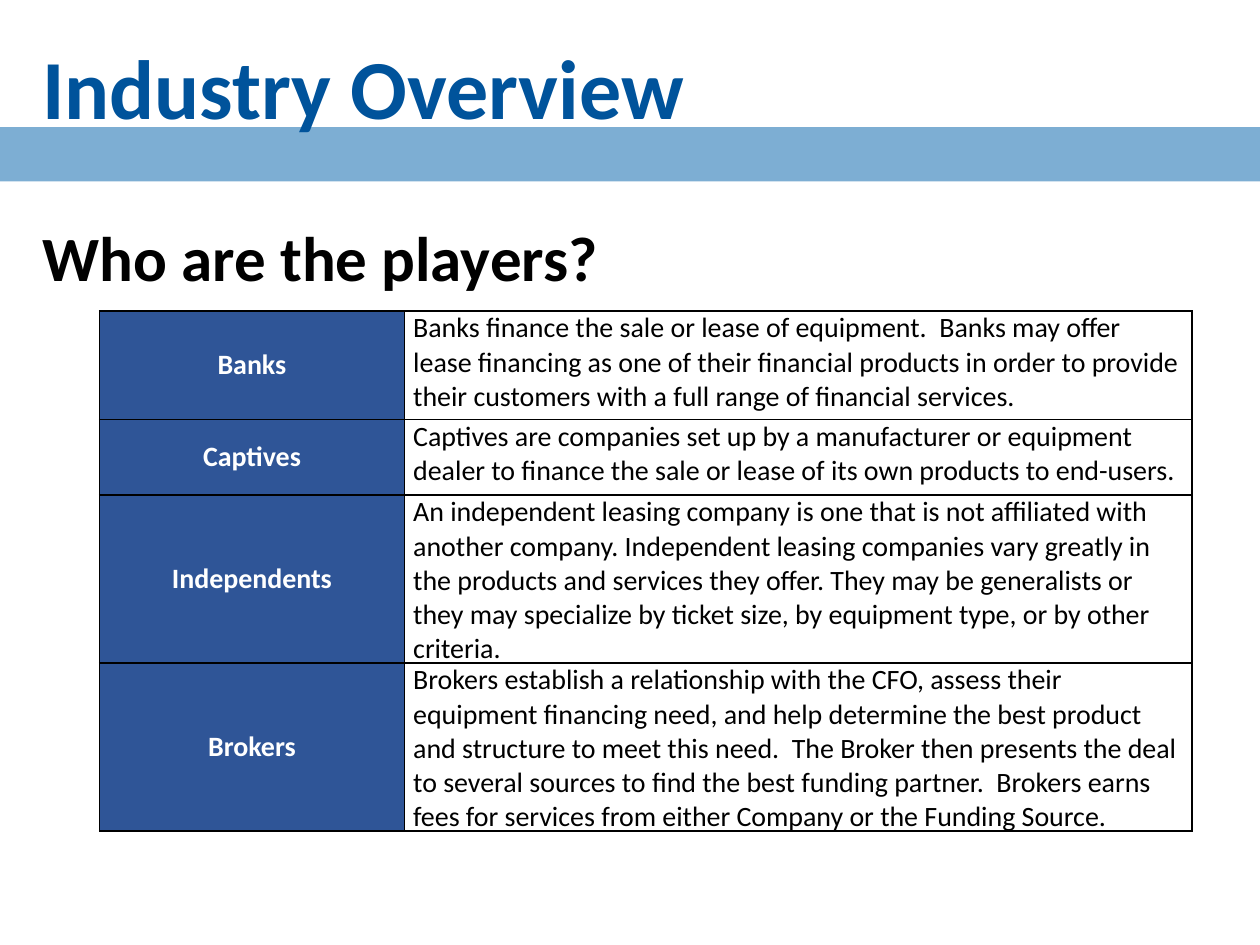
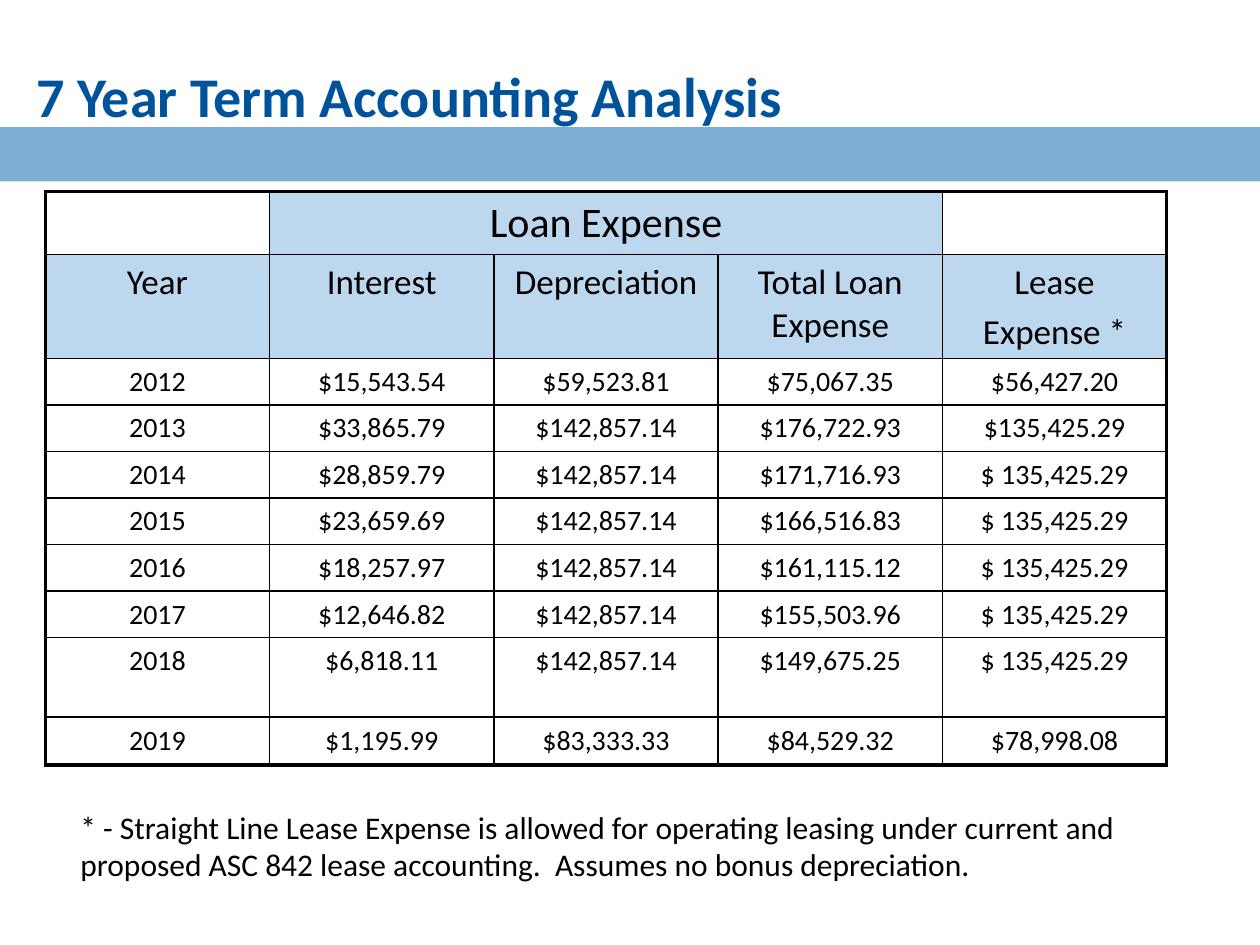
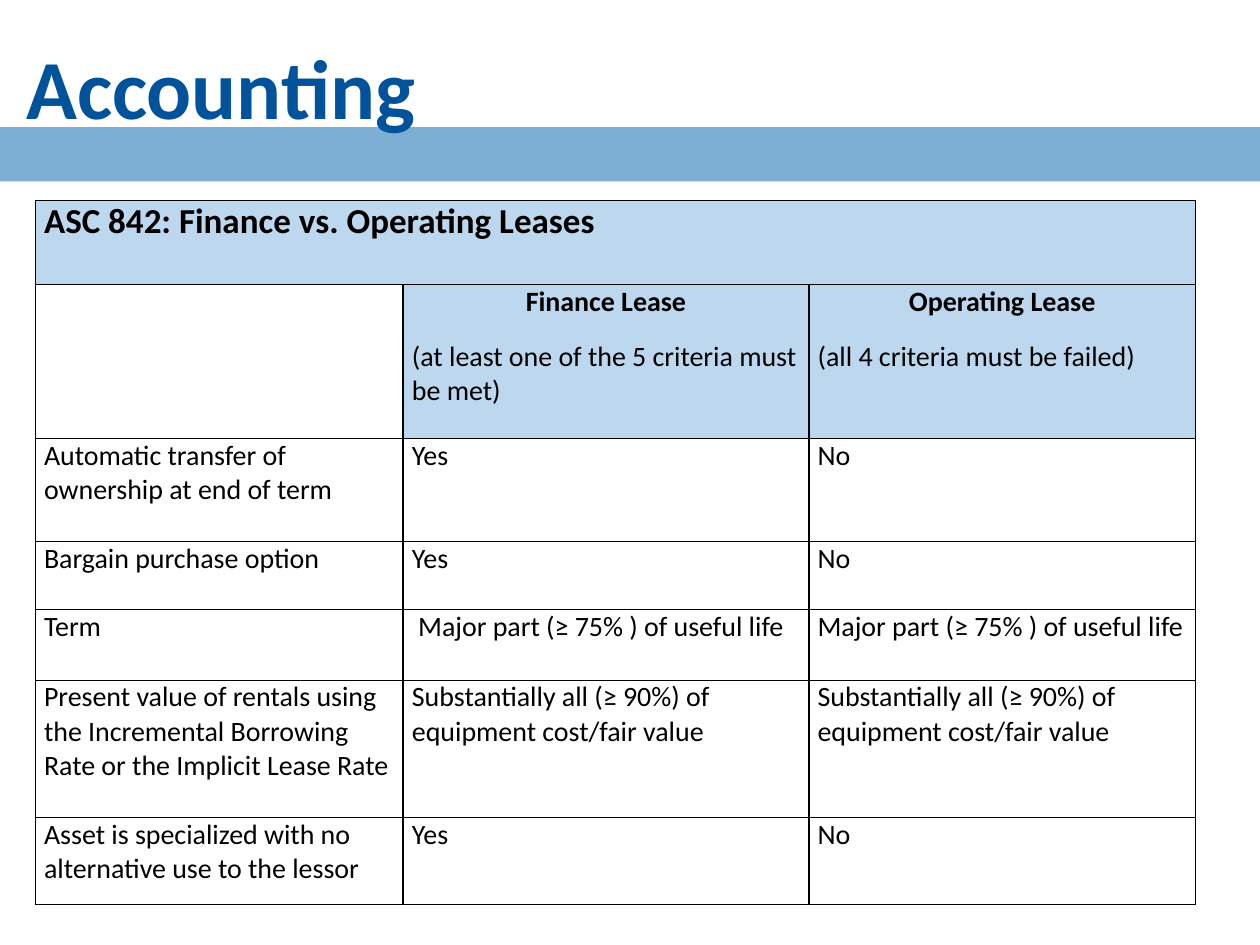
from lxml.etree import SubElement
from pptx import Presentation
from pptx.dml.color import RGBColor
from pptx.enum.shapes import MSO_SHAPE
from pptx.enum.text import MSO_ANCHOR, PP_ALIGN
from pptx.oxml.ns import qn
from pptx.util import Inches, Pt

# Shared look
FONT = "Calibri"
BLACK = RGBColor(0x00, 0x00, 0x00)
WHITE = RGBColor(0xFF, 0xFF, 0xFF)
TITLE_BLUE = RGBColor(0x00, 0x53, 0x9B)
BAND_BLUE = RGBColor(0x7D, 0xAE, 0xD3)
LABEL_BLUE = RGBColor(0x2F, 0x55, 0x97)
HEADER_BLUE = RGBColor(0xBD, 0xD7, 0xEE)
THIN, THICK = 1, 2.25

# Slide 1 content
PLAYERS = [
    ("Banks", "Banks finance the sale or lease of equipment.  Banks may offer lease financing as one of "
              "their financial products in order to provide their customers with a full range of "
              "financial services."),
    ("Captives", "Captives are companies set up by a manufacturer or equipment dealer to finance the sale "
                 "or lease of its own products to end-users."),
    ("Independents", "An independent leasing company is one that is not affiliated with another company. "
                     "Independent leasing companies vary greatly in the products and services they offer. "
                     "They may be generalists or they may specialize by ticket size, by equipment type, "
                     "or by other criteria."),
    ("Brokers", "Brokers establish a relationship with the CFO, assess their equipment financing need, "
                "and help determine the best product and structure to meet this need.  The Broker then "
                "presents the deal to several sources to find the best funding partner.  Brokers earns "
                "fees for services from either Company or the Funding Source."),
]
PLAYER_COLUMNS = [2.42, 6.25]
PLAYER_ROWS = [0.86, 0.6, 1.33, 1.33]

# Slide 2 content
EXPENSES = [
    ("", "Loan Expense", "", "", ""),
    ("Year", "Interest", "Depreciation", "Total Loan Expense", "Lease\nExpense *"),
    ("2012", "$15,543.54", "$59,523.81", "$75,067.35", "$56,427.20"),
    ("2013", "$33,865.79", "$142,857.14", "$176,722.93", "$135,425.29"),
    ("2014", "$28,859.79", "$142,857.14", "$171,716.93", "$ 135,425.29"),
    ("2015", "$23,659.69", "$142,857.14", "$166,516.83", "$ 135,425.29"),
    ("2016", "$18,257.97", "$142,857.14", "$161,115.12", "$ 135,425.29"),
    ("2017", "$12,646.82", "$142,857.14", "$155,503.96", "$ 135,425.29"),
    ("2018", "$6,818.11", "$142,857.14", "$149,675.25", "$ 135,425.29"),
    ("2019", "$1,195.99", "$83,333.33", "$84,529.32", "$78,998.08"),
]
EXPENSE_COLUMNS = [1.78] * 5
EXPENSE_ROWS = [0.5, 0.82] + [0.37] * 6 + [0.63, 0.38]
FOOTNOTE = ("* - Straight Line Lease Expense is allowed for operating leasing under current and "
            "proposed ASC 842 lease accounting.  Assumes no bonus depreciation.")

# Slide 3 content
LEASES = [
    ("ASC 842: Finance vs. Operating Leases", "", ""),
    ("", "Finance Lease\n(at least one of the 5 criteria must be met)",
     "Operating Lease\n(all 4 criteria must be failed)"),
    ("Automatic transfer of ownership at end of term", "Yes", "No"),
    ("Bargain purchase option", "Yes", "No"),
    ("Term", " Major part (≥ 75% ) of useful life", "Major part (≥ 75% ) of useful life"),
    ("Present value of rentals using the Incremental Borrowing Rate or the Implicit Lease Rate",
     "Substantially all (≥ 90%) of equipment cost/fair value",
     "Substantially all (≥ 90%) of equipment cost/fair value"),
    ("Asset is specialized with no alternative use to the lessor", "Yes", "No"),
]
LEASE_COLUMNS = [2.92, 3.22, 3.07]
LEASE_ROWS = [0.67, 1.22, 0.82, 0.54, 0.56, 1.09, 0.69]


def write(frame, text, size=16, color=BLACK, bold=False, align=PP_ALIGN.LEFT,
          before=0, after=0, line=None):
    """Add one paragraph, filling the empty first one if there is one."""
    first = not frame.text
    paragraph = frame.paragraphs[0] if first else frame.add_paragraph()
    paragraph.alignment = align
    paragraph.space_before = Pt(0 if first else before)
    paragraph.space_after = Pt(after)
    if line:
        paragraph.line_spacing = line
    run = paragraph.add_run()
    run.text = text
    run.font.name, run.font.size = FONT, Pt(size)
    run.font.bold, run.font.color.rgb = bold, color


def add_text(slide, text, left, top, width, height, **style):
    frame = slide.shapes.add_textbox(*map(Inches, (left, top, width, height))).text_frame
    frame.word_wrap = True
    write(frame, text, **style)


def add_titled_slide(deck, title, left, top, height, size=48):
    slide = deck.slides.add_slide(deck.slide_layouts[6])
    band = slide.shapes.add_shape(MSO_SHAPE.RECTANGLE, 0, Inches(1.01), deck.slide_width, Inches(0.43))
    band.shadow.inherit = False
    band.fill.solid()
    band.fill.fore_color.rgb = BAND_BLUE
    band.line.fill.background()
    add_text(slide, title, left, top, 7.53, height, size=size, color=TITLE_BLUE, bold=True)
    return slide


def set_borders(cell, widths):
    properties = cell._tc.get_or_add_tcPr()
    for side, width in widths.items():
        border = SubElement(properties, qn(f"a:ln{side}"), w=str(Pt(width)))
        fill = SubElement(border, qn("a:solidFill"))
        SubElement(fill, qn("a:srgbClr"), val=str(BLACK))


def add_grid(slide, content, left, top, columns, rows, look, merge=None, outer=THIN, tight=True):
    """Draw a table; look(row, column) gives a cell's fill, anchor and one style per paragraph."""
    table = slide.shapes.add_table(len(rows), len(columns), Inches(left), Inches(top),
                                   Inches(sum(columns)), Inches(sum(rows))).table
    table.first_row = table.horz_banding = False
    for column, width in zip(table.columns, columns):
        column.width = Inches(width)
    for row, height in zip(table.rows, rows):
        row.height = Inches(height)
    if merge:
        first, last = merge
        table.cell(0, first).merge(table.cell(0, last))
    for r, texts in enumerate(content):
        for c, text in enumerate(texts):
            cell = table.cell(r, c)
            fill, anchor, styles = look(r, c)
            set_borders(cell, {"L": outer if c == 0 else THIN,
                               "R": outer if c == len(columns) - 1 else THIN,
                               "T": outer if r == 0 else THIN,
                               "B": outer if r == len(rows) - 1 else THIN})
            if tight:
                cell.margin_left = cell.margin_right = Inches(0.07)
                cell.margin_top = cell.margin_bottom = 0
            cell.vertical_anchor = anchor
            if fill:
                cell.fill.solid()
                cell.fill.fore_color.rgb = fill
            else:
                cell.fill.background()
            if text:
                for line, style in zip(text.split("\n"), styles):
                    write(cell.text_frame, line, **style)


def player_look(row, column):
    if column == 0:
        label = dict(color=WHITE, bold=True, align=PP_ALIGN.CENTER, after=3)
        return LABEL_BLUE, MSO_ANCHOR.MIDDLE, [label]
    return None, MSO_ANCHOR.TOP, [dict(after=0 if row == len(PLAYERS) - 1 else 3)]


def expense_look(row, column):
    size = {0: 24, 1: 20}.get(row, 16)
    shaded = row == 1 or (row == 0 and 1 <= column <= 3)
    style = dict(size=size, align=PP_ALIGN.CENTER, before=size * 0.2)
    return HEADER_BLUE if shaded else None, MSO_ANCHOR.TOP, [style, style]


def lease_look(row, column):
    plain = dict(before=6, after=6)
    if row == 0:
        return HEADER_BLUE, MSO_ANCHOR.TOP, [dict(plain, size=20, bold=True)]
    if row == 1:
        heading = dict(plain, bold=True, align=PP_ALIGN.CENTER)
        return HEADER_BLUE if column else None, MSO_ANCHOR.TOP, [heading, plain]
    return None, MSO_ANCHOR.TOP, [plain]


def main():
    deck = Presentation()
    deck.slide_width, deck.slide_height = Inches(10), Inches(7.5)

    # Industry players
    overview = add_titled_slide(deck, "Industry Overview", 0.24, 0.23, 0.91)
    add_text(overview, "Who are the players?", 0.24, 1.75, 9.22, 0.7, size=36, bold=True, line=0.9)
    add_grid(overview, PLAYERS, 0.79, 2.47, PLAYER_COLUMNS, PLAYER_ROWS, player_look)

    # Loan and lease expense by year
    analysis = add_titled_slide(deck, "7 Year Term Accounting Analysis", 0.19, 0.44, 0.64, size=32)
    add_grid(analysis, EXPENSES, 0.36, 1.52, EXPENSE_COLUMNS, EXPENSE_ROWS, expense_look,
             merge=(1, 3), outer=THICK, tight=False)
    add_text(analysis, FOOTNOTE, 0.54, 6.36, 8.77, 0.71, size=18)

    # Finance and operating leases
    accounting = add_titled_slide(deck, "Accounting", 0.11, 0.23, 1.21)
    add_grid(accounting, LEASES, 0.28, 1.59, LEASE_COLUMNS, LEASE_ROWS, lease_look, merge=(0, 2))

    deck.save("out.pptx")


if __name__ == "__main__":
    main()
